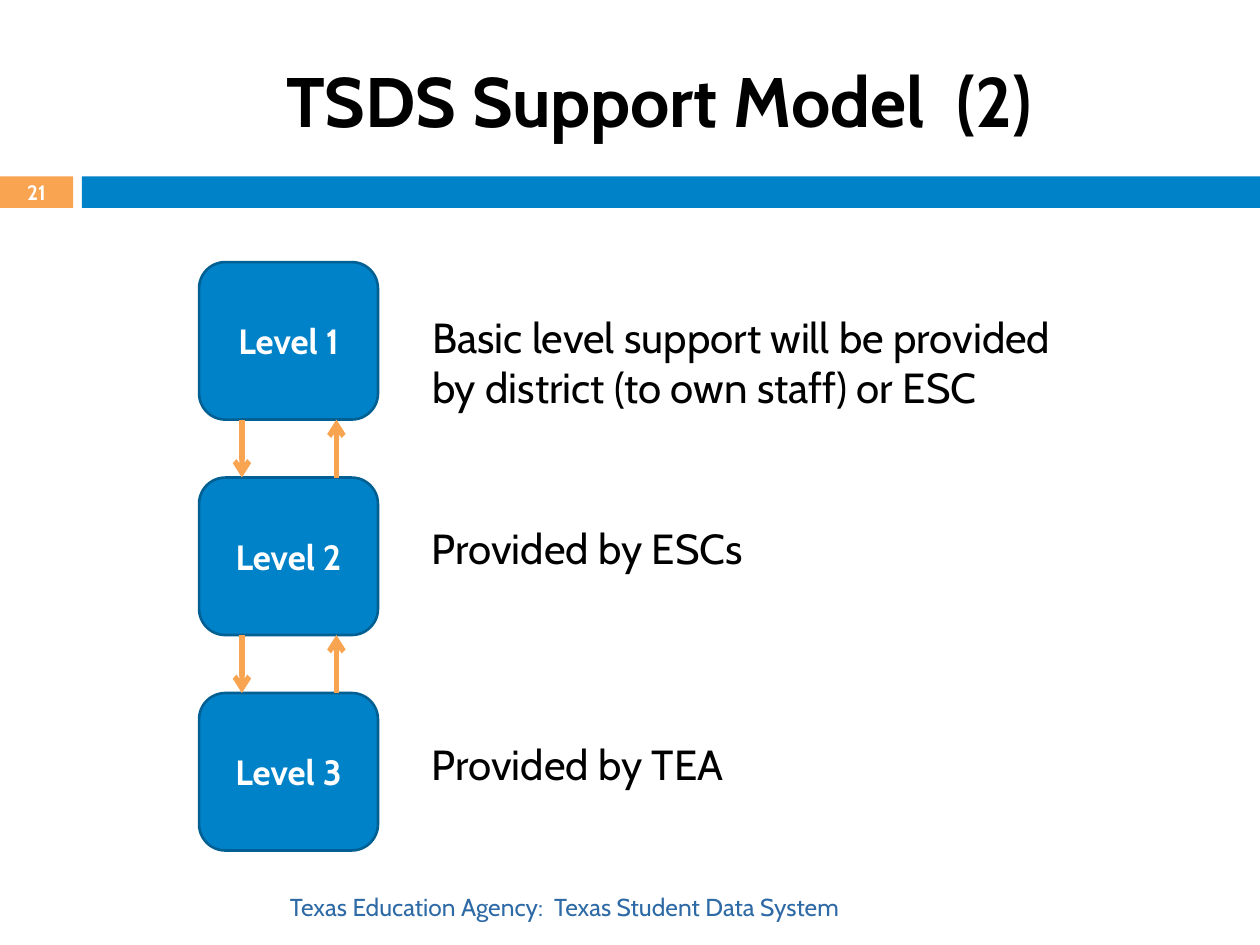
import lxml.etree
import pptx
import pptx.util
import pptx.dml.color
import pptx.enum.shapes
import pptx.enum.text
import pptx.oxml.ns

SCALE = 9144
BLUE, EDGE, GOLD = "0082C8", "006094", "F9A451"
WHITE, BLACK, NAVY = "FFFFFF", "000000", "2E6AA6"
ALIGN = pptx.enum.text.PP_ALIGN
ANCHOR = pptx.enum.text.MSO_ANCHOR
KIND = pptx.enum.shapes.MSO_SHAPE
LINE = pptx.enum.shapes.MSO_CONNECTOR


def px(count):
    return pptx.util.Emu(count * SCALE)


def paint(target, color):
    target.rgb = pptx.dml.color.RGBColor.from_string(color)


def apply(target, values):
    for name, value in values.items():
        setattr(target, name, value)


def child(parent, tag, **values):
    lxml.etree.SubElement(parent, pptx.oxml.ns.qn(tag), values)


class Deck:
    font = "Cabin"

    def __init__(self, wide, high):
        self.file = pptx.Presentation()
        apply(self.file, {"slide_width": px(wide), "slide_height": px(high)})
        self.slide = self.file.slides.add_slide(self.file.slide_layouts[1])

    def letter(self, shape, text, size, color, bold=False, align=ALIGN.LEFT,
               anchor=ANCHOR.MIDDLE):
        frame = shape.text_frame
        apply(frame, {"word_wrap": True, "vertical_anchor": anchor,
                      "auto_size": pptx.enum.text.MSO_AUTO_SIZE.NONE})
        para = frame.paragraphs[0]
        apply(para, {"alignment": align, "space_before": pptx.util.Pt(0)})
        run = para.add_run()
        run.text = text
        apply(run.font, {"name": self.font, "bold": bold,
                         "size": pptx.util.Pt(size)})
        paint(run.font.color, color)
        return frame

    def holder(self, index, box, text, size, **style):
        shape = self.slide.placeholders[index]
        places = map(px, box)
        apply(shape, dict(zip(("left", "top", "width", "height"), places)))
        frame = self.letter(shape, text, size, BLACK, **style)
        props = frame.paragraphs[0]._p.get_or_add_pPr()
        for name in ("marL", "indent"):
            props.set(name, "0")
        child(props, "a:buNone")

    def label(self, box, text, size, color, **style):
        shape = self.slide.shapes.add_textbox(*map(px, box))
        return self.letter(shape, text, size, color, **style)

    def block(self, kind, box, fill, edge=None):
        shape = self.slide.shapes.add_shape(kind, *map(px, box))
        shape.shadow.inherit = False
        shape.fill.solid()
        paint(shape.fill.fore_color, fill)
        if edge:
            shape.line.width = pptx.util.Pt(1.5)
            paint(shape.line.color, edge)
        else:
            shape.line.fill.background()
        return shape

    def arrow(self, left, start, end):
        ends = map(px, (left, start, left, end))
        shape = self.slide.shapes.add_connector(LINE.STRAIGHT, *ends)
        shape.line.width = pptx.util.Pt(3)
        paint(shape.line.color, GOLD)
        props = shape._element.spPr
        child(props.find(pptx.oxml.ns.qn("a:ln")), "a:tailEnd", type="arrow")
        child(props, "a:effectLst")


def main():
    deck = Deck(1000, 750)
    deck.block(KIND.RECTANGLE, (0, 140, 58, 25), GOLD)
    deck.block(KIND.RECTANGLE, (65, 140, 935, 25), BLUE)
    deck.label((83, 700, 593, 40),
               "Texas Education Agency:  Texas Student Data System",
               14, NAVY, align=ALIGN.RIGHT)
    deck.holder(0, (217, 25, 742, 108), "TSDS Support Model  (2)", 40,
                bold=True)
    deck.holder(1, (333, 242, 517, 67),
                "Basic level support will be provided by district "
                "(to own staff) or ESC", 24, anchor=ANCHOR.TOP)
    page = deck.label((0, 139, 58, 27), "21", 11.9, WHITE, bold=True,
                      align=ALIGN.CENTER)
    apply(page, {"margin_top": 0, "margin_bottom": 0})

    top, high, step = 208, 125, 171
    for index in range(3):
        y = top + index * step
        tile = deck.block(KIND.ROUNDED_RECTANGLE, (158, y, 142, high),
                          BLUE, EDGE)
        deck.letter(tile, f"Level {index + 1}", 20, WHITE, bold=True,
                    align=ALIGN.CENTER)
        if index:
            above = y - step + high
            deck.arrow(192, above, y)
            deck.arrow(267, y, above)

    for y, wide, text in ((410, 417, "Provided by ESCs"),
                          (581, 400, "Provided by TEA")):
        deck.label((333, y, wide, 62), text, 24, BLACK, anchor=ANCHOR.TOP)
    deck.file.save("out.pptx")


if __name__ == "__main__":
    main()
